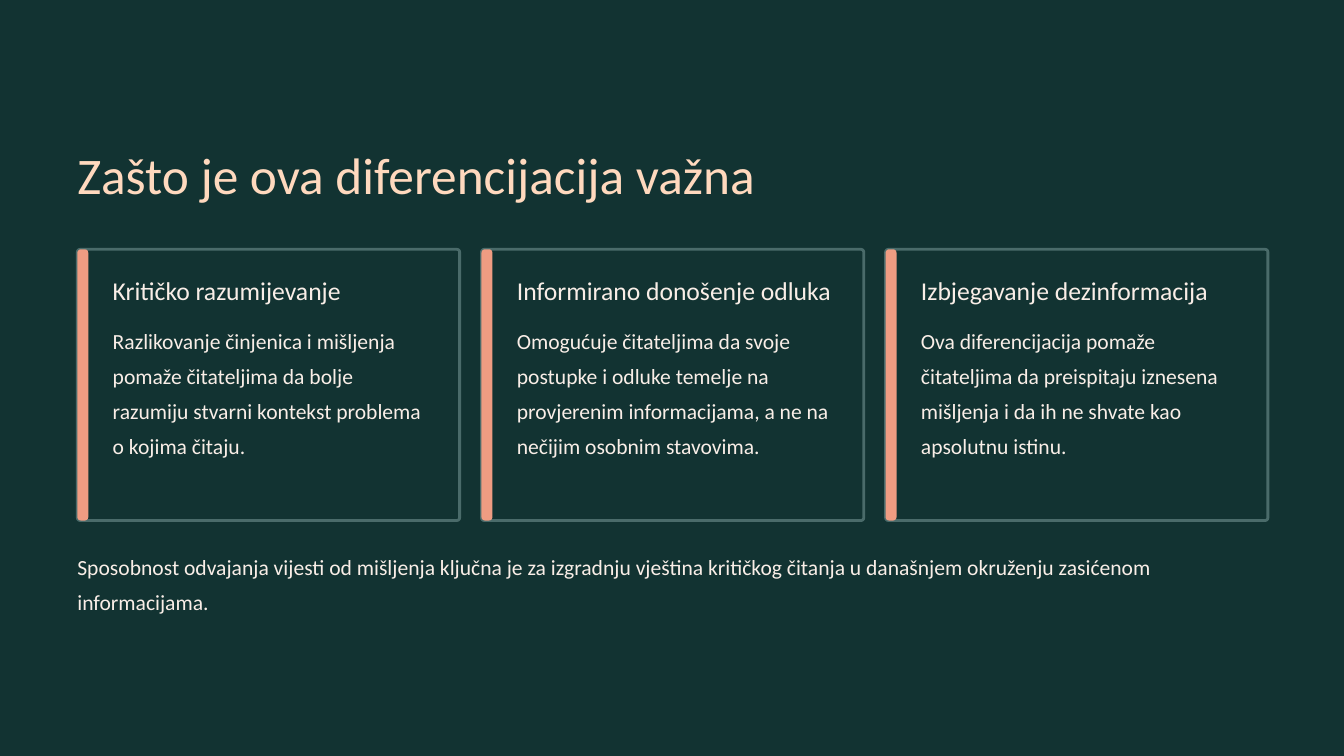
from pptx import Presentation
from pptx.dml.color import RGBColor
from pptx.enum.shapes import MSO_SHAPE
from pptx.util import Cm, Pt

ROUND = MSO_SHAPE.ROUNDED_RECTANGLE
DARK = RGBColor(0x12, 0x33, 0x32)
EDGE = RGBColor(0x4A, 0x6B, 0x6A)
CORAL = RGBColor(0xEF, 0x9C, 0x82)
PEACH = RGBColor(0xFF, 0xD9, 0xBE)
CREAM = RGBColor(0xF9, 0xEE, 0xE7)

TITLE = {"size": Pt(44), "name": "Calibri"}
HEAD = {"size": Pt(22), "name": "Calibri"}
BODY = {"size": Pt(18.5), "name": "Calibri"}

LEFT, TOP = 2.34, 7.54
WIDE, HIGH = 11.56, 8.2
STEP = 12.22
INSET = 1.07

CARDS = [
    ("Kritičko razumijevanje",
     "Razlikovanje činjenica i mišljenja pomaže čitateljima da bolje "
     "razumiju stvarni kontekst problema o kojima čitaju."),
    ("Informirano donošenje odluka",
     "Omogućuje čitateljima da svoje postupke i odluke temelje na "
     "provjerenim informacijama, a ne na nečijim osobnim stavovima."),
    ("Izbjegavanje dezinformacija",
     "Ova diferencijacija pomaže čitateljima da preispitaju iznesena "
     "mišljenja i da ih ne shvate kao apsolutnu istinu."),
]

deck = Presentation()
deck.slide_width = Cm(40.64)
deck.slide_height = Cm(22.86)
slide = deck.slides.add_slide(deck.slide_layouts[6])
back = slide.background.fill
back.solid()
back.fore_color.rgb = DARK


def add_text(text, x, y, w, h, style, lead, color=CREAM):
    frame = slide.shapes.add_textbox(Cm(x), Cm(y), Cm(w), Cm(h)).text_frame
    for side in ("left", "top", "right", "bottom"):
        setattr(frame, f"margin_{side}", 0)
    frame.word_wrap = True
    para = frame.paragraphs[0]
    para.line_spacing = Pt(lead)
    run = para.add_run()
    run.text = text
    for key, value in style.items():
        setattr(run.font, key, value)
    run.font.color.rgb = color


def add_panel(x, w, curve, color):
    panel = slide.shapes.add_shape(ROUND, Cm(x), Cm(TOP), Cm(w), Cm(HIGH))
    panel.shadow.inherit = False
    panel.adjustments[0] = curve
    panel.fill.solid()
    panel.fill.fore_color.rgb = color
    panel.line.fill.background()
    return panel


add_text("Zašto je ova diferencijacija važna",
         LEFT, 4.24, 23.14, 1.96, TITLE, 55, PEACH)

for i, (head, body) in enumerate(CARDS):
    x = LEFT + i * STEP
    card = add_panel(x, WIDE, 0.01, DARK)
    card.line.color.rgb = EDGE
    card.line.width = Pt(2.4)
    add_panel(x, 0.33, 0.3, CORAL)
    add_text(head, x + INSET, 8.28, 9.7, 0.97, HEAD, 27.5)
    add_text(body, x + INSET, 9.65, 9.7, 4.27, BODY, 30)

add_text("Sposobnost odvajanja vijesti od mišljenja ključna je za izgradnju "
         "vještina kritičkog čitanja u današnjem okruženju zasićenom "
         "informacijama.", LEFT, 16.48, 36, 2.13, BODY, 30)

deck.save("out.pptx")
